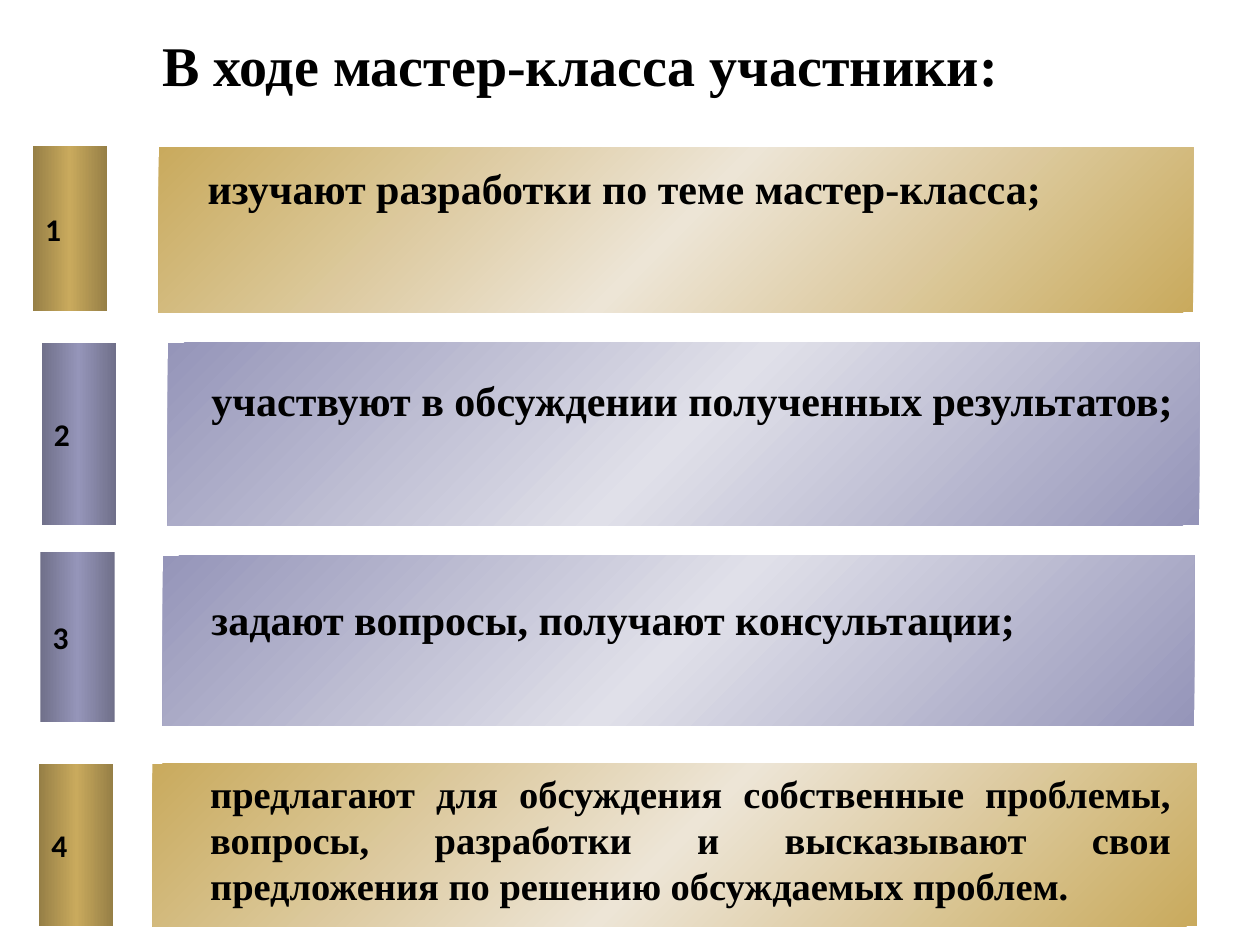
from copy import deepcopy
from dataclasses import dataclass

from pptx import Presentation
from pptx.dml.color import RGBColor
from pptx.enum.shapes import MSO_SHAPE
from pptx.enum.text import MSO_ANCHOR, PP_ALIGN
from pptx.oxml.ns import qn
from pptx.util import Inches, Pt

SLIDE_WIDTH = Inches(10)
SLIDE_HEIGHT = Inches(7.5)
HEADING_FONT = "Times New Roman"
NUMBER_FONT = "Calibri"
BLACK = "000000"
TAB_WIDTH = 5.9


@dataclass(frozen=True)
class Box:
    """Left, top, width and height as percentages of the slide's size."""
    left: float
    top: float
    width: float
    height: float

    def lengths(self) -> tuple[int, int, int, int]:
        return (
            int(SLIDE_WIDTH * self.left / 100),
            int(SLIDE_HEIGHT * self.top / 100),
            int(SLIDE_WIDTH * self.width / 100),
            int(SLIDE_HEIGHT * self.height / 100),
        )


@dataclass(frozen=True)
class Palette:
    main: str
    light: str
    dark: str


@dataclass(frozen=True)
class Step:
    palette: Palette
    band: Box
    tab_left: float
    tab_top: float
    text_box: Box
    text: str
    size: int = 24
    alignment: PP_ALIGN = PP_ALIGN.LEFT


GOLD = Palette("C9AA5D", "EDE5D6", "967F46")
VIOLET = Palette("9595B9", "E0E0E9", "70708A")

STEPS = [
    Step(GOLD, Box(12.6, 15.6, 82.1, 17.47), 2.6, 15.47,
         Box(15.5, 16.53, 71, 6.67),
         "изучают разработки по теме мастер-класса;"),
    Step(VIOLET, Box(13.3, 36.27, 81.9, 19.33), 3.3, 36.27,
         Box(15.8, 38.93, 78.9, 6.67),
         "участвуют в обсуждении полученных результатов;"),
    Step(VIOLET, Box(12.9, 58.8, 81.9, 18), 3.2, 58.4,
         Box(15.8, 62.13, 76.1, 6.67),
         "задают вопросы, получают консультации;",
         alignment=PP_ALIGN.JUSTIFY),
    Step(GOLD, Box(12.1, 80.8, 82.9, 17.2), 3.1, 80.8,
         Box(15.7, 80.8, 78.2, 16.13),
         "предлагают для обсуждения собственные проблемы, вопросы, "
         "разработки и высказывают свои предложения по решению "
         "обсуждаемых проблем.",
         size=22, alignment=PP_ALIGN.JUSTIFY),
]


def color(value: str) -> RGBColor:
    return RGBColor.from_string(value)


def add_gradient_box(slide, box: Box, edge: str, middle: str, angle: int):
    """Draw a rectangle whose gradient runs from edge to middle and back."""
    shape = slide.shapes.add_shape(MSO_SHAPE.RECTANGLE, *box.lengths())
    shape.shadow.inherit = False
    shape.line.fill.background()
    shape.fill.gradient()
    shape.fill.gradient_angle = angle
    stop_list = next(shape._element.spPr.iter(qn("a:gsLst")))
    stop_list.insert(1, deepcopy(stop_list[0]))
    for stop, position, value in zip(
        shape.fill.gradient_stops, (0, 0.5, 1), (edge, middle, edge)
    ):
        stop.position = position
        stop.color.rgb = color(value)
    return shape


def write_text(shape, text: str, size: int, font_name: str,
               alignment: PP_ALIGN = PP_ALIGN.LEFT) -> None:
    shape.text_frame.word_wrap = True
    paragraph = shape.text_frame.paragraphs[0]
    paragraph.alignment = alignment
    run = paragraph.add_run()
    run.text = text
    run.font.size = Pt(size)
    run.font.name = font_name
    run.font.bold = True
    run.font.color.rgb = color(BLACK)


def add_text(slide, box: Box, text: str, size: int,
             alignment: PP_ALIGN = PP_ALIGN.LEFT) -> None:
    text_box = slide.shapes.add_textbox(*box.lengths())
    write_text(text_box, text, size, HEADING_FONT, alignment)


def add_step(slide, number: int, step: Step) -> None:
    palette = step.palette
    add_gradient_box(slide, step.band, palette.main, palette.light, 315)
    tab_box = Box(step.tab_left, step.tab_top, TAB_WIDTH, step.band.height)
    tab = add_gradient_box(slide, tab_box, palette.dark, palette.main, 0)
    tab.text_frame.vertical_anchor = MSO_ANCHOR.MIDDLE
    write_text(tab, str(number), 18, NUMBER_FONT)
    add_text(slide, step.text_box, step.text, step.size, step.alignment)


def main() -> None:
    presentation = Presentation()
    presentation.slide_width = SLIDE_WIDTH
    presentation.slide_height = SLIDE_HEIGHT
    slide = presentation.slides.add_slide(presentation.slide_layouts[6])
    add_text(slide, Box(11.9, 2.53, 70.1, 8.53),
             "В ходе мастер-класса участники:", 32)
    for number, step in enumerate(STEPS, start=1):
        add_step(slide, number, step)
    presentation.save("out.pptx")


if __name__ == "__main__":
    main()
